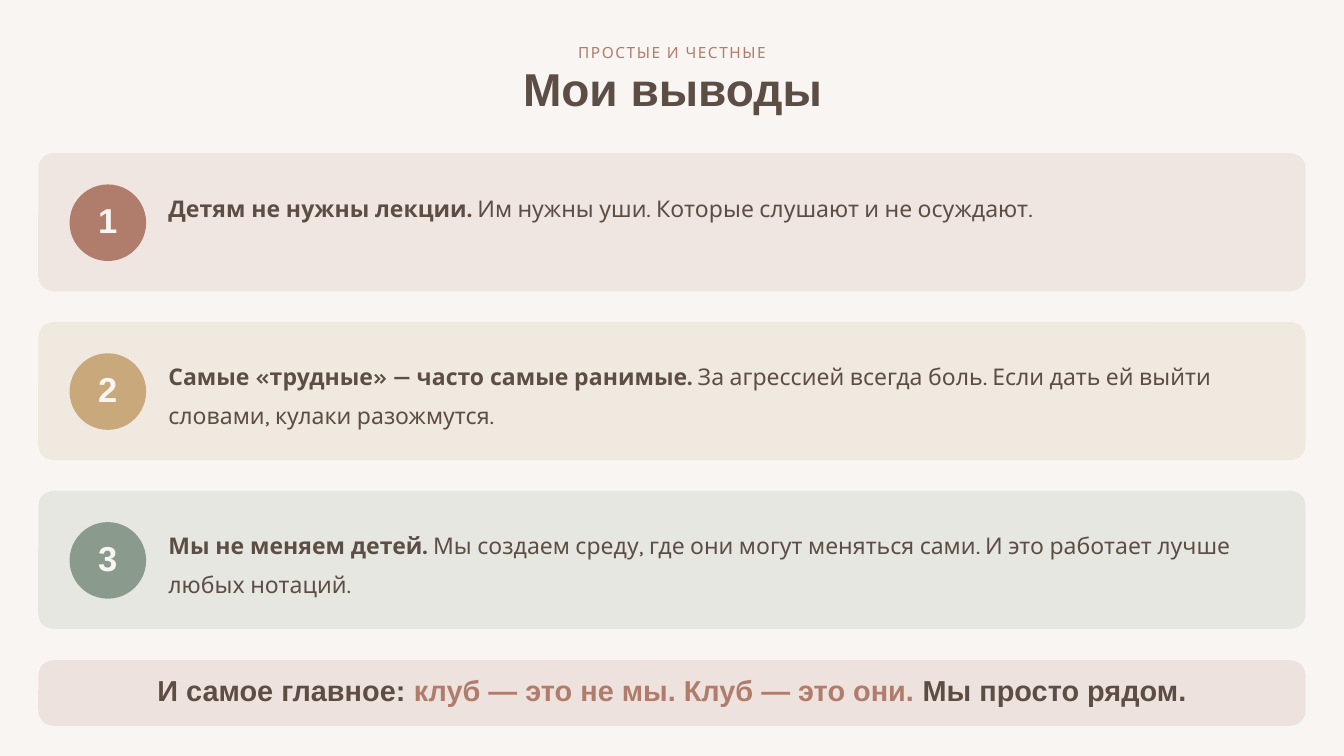
from dataclasses import dataclass

from lxml import etree
from pptx import Presentation
from pptx import util as u
from pptx.dml.color import RGBColor
from pptx.enum import shapes, text
from pptx.oxml.ns import qn


@dataclass(frozen=True)
class Theme:
    background: str = "F8F5F2"
    ink: str = "5D4E45"
    clay: str = "B07C6B"
    sand: str = "C9A87C"
    sage: str = "8A9A8C"
    heading_font: str = "Arial"
    body_font: str = "Karla"
    kicker_size: float = 11
    title_size: float = 32.9
    number_size: float = 24.7
    body_size: float = 16.4
    closing_size: float = 20.6


THEME = Theme()
WIDTH, HEIGHT = 13.33, 7.5
MARGIN = 0.38
CARD_WIDTH = WIDTH - 2 * MARGIN
CARD_TOP, CARD_HEIGHT, CARD_PITCH = 1.52, 1.37, 1.675
PADDING = 0.31
BADGE = 0.76
BODY_LEFT, BODY_WIDTH, LINE_HEIGHT = 1.67, 11.09, 0.37
CORNER = 0.15

CONCLUSIONS = [
    (THEME.clay, 12, 1, "Детям не нужны лекции.",
     " Им нужны уши. Которые слушают и не осуждают."),
    (THEME.sand, 15, 2, "Самые «трудные» — часто самые ранимые.",
     " За агрессией всегда боль. Если дать ей выйти словами, кулаки разожмутся."),
    (THEME.sage, 15, 2, "Мы не меняем детей.",
     " Мы создаем среду, где они могут меняться сами. И это работает лучше любых нотаций."),
]


def rgb(color):
    return RGBColor.from_string(color)


def box(left, top, width, height):
    return [u.Inches(value) for value in (left, top, width, height)]


def add_run(paragraph, words, size, font, color, bold=False, tracking=None):
    run = paragraph.add_run()
    run.text = words
    run.font.size = u.Pt(size)
    run.font.name = font
    run.font.bold = bold
    run.font.color.rgb = rgb(color)
    if tracking:
        run._r.get_or_add_rPr().set("spc", str(round(tracking * 100)))


def first_paragraph(holder, spacing, align=text.PP_ALIGN.CENTER):
    """Strip the frame's insets and return its formatted first paragraph."""
    frame = holder.text_frame
    frame.word_wrap = True
    frame.auto_size = text.MSO_AUTO_SIZE.NONE
    frame.vertical_anchor = text.MSO_ANCHOR.MIDDLE
    frame.margin_left = frame.margin_right = 0
    frame.margin_top = frame.margin_bottom = 0
    paragraph = frame.paragraphs[0]
    paragraph.alignment = align
    paragraph.line_spacing = spacing
    return paragraph


def add_filled(slide, kind, area, color, opacity=100):
    shape = slide.shapes.add_shape(kind, *box(*area))
    shape.shadow.inherit = False
    shape.line.fill.background()
    shape.fill.solid()
    shape.fill.fore_color.rgb = rgb(color)
    if opacity < 100:
        tint = shape.element.spPr.find(f".//{qn('a:srgbClr')}")
        etree.SubElement(tint, qn("a:alpha")).set("val", str(opacity * 1000))
    return shape


def add_panel(slide, top, height, color, opacity):
    panel = add_filled(slide, shapes.MSO_SHAPE.ROUNDED_RECTANGLE,
                       (MARGIN, top, CARD_WIDTH, height), color, opacity)
    panel.adjustments[0] = CORNER / height


def add_heading(slide):
    kicker = slide.shapes.add_textbox(*box(0.34, 0.38, 12.65, 0.23))
    add_run(first_paragraph(kicker, 1.3), "ПРОСТЫЕ И ЧЕСТНЫЕ", THEME.kicker_size,
            THEME.body_font, THEME.clay, tracking=1.1)
    title = slide.shapes.title
    title.left, title.top, title.width, title.height = box(0.27, 0.69, 12.8, 0.46)
    add_run(first_paragraph(title, 0.8), "Мои выводы", THEME.title_size,
            THEME.heading_font, THEME.ink, bold=True)


def add_conclusion(slide, index, color, opacity, lines, claim, reason):
    top = CARD_TOP + index * CARD_PITCH
    add_panel(slide, top, CARD_HEIGHT, color, opacity)
    badge = add_filled(slide, shapes.MSO_SHAPE.OVAL,
                       (MARGIN + PADDING, top + PADDING, BADGE, BADGE), color)
    add_run(first_paragraph(badge, 0.9), str(index + 1), THEME.number_size,
            THEME.heading_font, THEME.background, bold=True)
    body = slide.shapes.add_textbox(
        *box(BODY_LEFT, top + PADDING, BODY_WIDTH, lines * LINE_HEIGHT))
    paragraph = first_paragraph(body, 1.4, text.PP_ALIGN.LEFT)
    for words, bold in ((claim, True), (reason, False)):
        add_run(paragraph, words, THEME.body_size, THEME.body_font, THEME.ink, bold)


def add_closing(slide):
    add_panel(slide, 6.55, 0.65, THEME.clay, 15)
    closing = slide.shapes.add_textbox(*box(0.61, 6.68, 12.11, 0.34))
    paragraph = first_paragraph(closing, 1.0)
    for words, color in (("И самое главное: ", THEME.ink),
                         ("клуб — это не мы. Клуб — это они.", THEME.clay),
                         (" Мы просто рядом.", THEME.ink)):
        add_run(paragraph, words, THEME.closing_size, THEME.heading_font, color, bold=True)


def main():
    deck = Presentation()
    deck.slide_width, deck.slide_height = u.Inches(WIDTH), u.Inches(HEIGHT)
    slide = deck.slides.add_slide(deck.slide_layouts.get_by_name("Title Only"))
    slide.background.fill.solid()
    slide.background.fill.fore_color.rgb = rgb(THEME.background)
    add_heading(slide)
    for index, conclusion in enumerate(CONCLUSIONS):
        add_conclusion(slide, index, *conclusion)
    add_closing(slide)
    deck.save("out.pptx")


if __name__ == "__main__":
    main()
